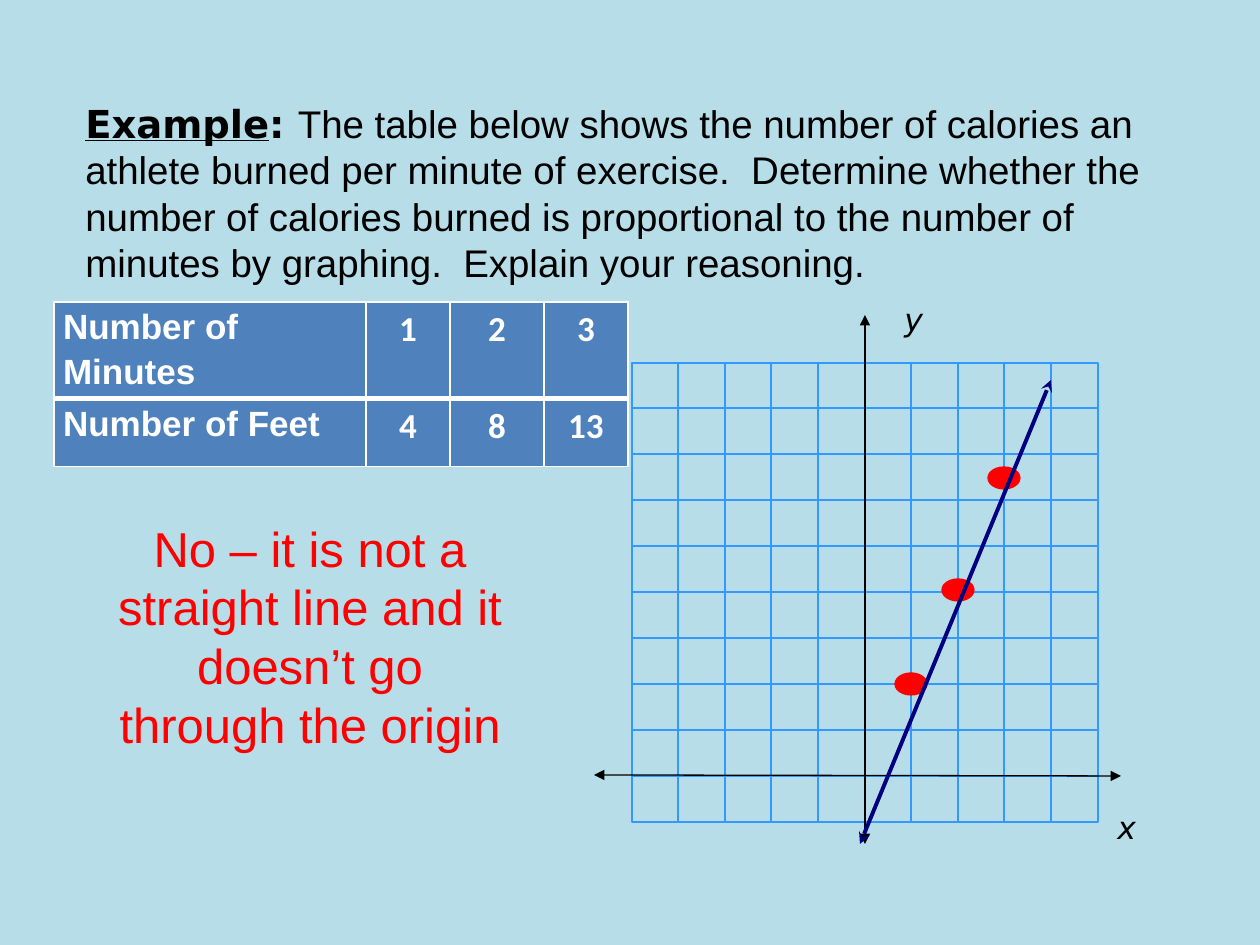
from lxml import etree
from pptx import Presentation
from pptx import util as u
from pptx.dml.color import RGBColor
from pptx.enum import shapes, text
from pptx.oxml.ns import qn

PX = 914400 // 126
HEX = {
    "back": "B7DEE8",
    "grid": "3399FF",
    "cell": "4F81BD",
    "white": "FFFFFF",
    "ink": "000000",
    "red": "FF0000",
    "navy": "000080",
}
ROWS = [
    ["Number of Minutes", "1", "2", "3"],
    ["Number of Feet", "4", "8", "13"],
]
WIDTHS = [312, 84, 94, 84]
ROW_H = 68
GRID = (632, 363, 466, 459)
COUNT = 10
POINTS = [(911, 684), (958, 590), (1004, 478)]


def px(*vals):
    return [u.Emu(v * PX) for v in vals]


def rgb(name):
    return RGBColor.from_string(HEX[name])


def style(run, size, font, color, bold=False, italic=False):
    run.font.size = u.Pt(size)
    run.font.name = font
    run.font.color.rgb = rgb(color)
    run.font.bold = bold
    run.font.italic = italic


def add_text(slide, box, parts, align=text.PP_ALIGN.LEFT):
    """Add a text box; parts pairs each run's wording with its style."""
    frame = slide.shapes.add_textbox(*px(*box)).text_frame
    frame.word_wrap = True
    frame.auto_size = text.MSO_AUTO_SIZE.SHAPE_TO_FIT_TEXT
    para = frame.paragraphs[0]
    para.alignment = align
    for words, look in parts:
        run = para.add_run()
        run.text = words
        style(run, *look)
    return para


def add_shape(parent, kind, box, line, fill=None):
    shape = parent.shapes.add_shape(kind, *px(*box))
    shape.shadow.inherit = False
    if fill:
        shape.fill.solid()
        shape.fill.fore_color.rgb = rgb(fill)
    else:
        shape.fill.background()
    shape.line.color.rgb = rgb(line)
    shape.line.width = u.Pt(0.75)


def add_grid(slide):
    left, top, width, height = GRID
    xs = [left + i * width // COUNT for i in range(COUNT + 1)]
    ys = [top + i * height // COUNT for i in range(COUNT + 1)]
    group = slide.shapes.add_group_shape()
    for y, low in zip(ys, ys[1:]):
        for x, right in zip(xs, xs[1:]):
            box = (x, y, right - x, low - y)
            add_shape(group, shapes.MSO_SHAPE.RECTANGLE, box, "grid")


def add_arrow(slide, ends, color, width, tip):
    """Add a line with the same arrowhead at both ends."""
    line = slide.shapes.add_connector(shapes.MSO_CONNECTOR.STRAIGHT, *px(*ends))
    line.line.color.rgb = rgb(color)
    line.line.width = u.Pt(width)
    props = line.line._get_or_add_ln()
    for tag in ("a:headEnd", "a:tailEnd"):
        etree.SubElement(props, qn(tag), type=tip)
    etree.SubElement(line._element.spPr, qn("a:effectLst"))


def add_border(cell, side, width):
    line = etree.SubElement(
        cell._tc.get_or_add_tcPr(), qn(f"a:ln{side}"), w=str(u.Pt(width))
    )
    fill = etree.SubElement(line, qn("a:solidFill"))
    etree.SubElement(fill, qn("a:srgbClr"), val=HEX["white"])


def fill_cell(cell, words, row, col):
    cell.margin_left = cell.margin_right = px(9)[0]
    cell.margin_top = cell.margin_bottom = 0
    for side in "LRTB":
        inner = side == ("B" if row == 0 else "T")
        add_border(cell, side, 3 if inner else 1)
    cell.fill.solid()
    cell.fill.fore_color.rgb = rgb("cell")
    para = cell.text_frame.paragraphs[0]
    para.text = words
    para.line_spacing = 1.15
    para.space_after = u.Pt(10)
    para.alignment = text.PP_ALIGN.CENTER if col else text.PP_ALIGN.LEFT
    style(para.runs[0], 20, "Calibri" if col else "Arial", "white", bold=True)


def add_table(slide):
    box = px(54, 302, sum(WIDTHS), ROW_H * len(ROWS))
    table = slide.shapes.add_table(len(ROWS), len(WIDTHS), *box).table
    table.first_row = table.horz_banding = False
    for col, width in zip(table.columns, px(*WIDTHS)):
        col.width = width
    for r, row in enumerate(ROWS):
        for c, words in enumerate(row):
            fill_cell(table.cell(r, c), words, r, c)


def main():
    deck = Presentation()
    deck.slide_width, deck.slide_height = u.Inches(10), u.Inches(7.5)
    slide = deck.slides.add_slide(deck.slide_layouts[6])
    slide.background.fill.solid()
    slide.background.fill.fore_color.rgb = rgb("back")

    label = (22, "DejaVu Sans", "ink", True)
    task = add_text(slide, (73, 94, 1109, 204), [
        ("Example", label),
        (": ", label),
        ("The table below shows the number of calories an athlete burned "
         "per minute of exercise.  Determine whether the number of calories "
         "burned is proportional to the number of minutes by graphing.  "
         "Explain your reasoning.", (22, "Arial", "ink")),
    ])
    task.runs[0].font.underline = True

    add_grid(slide)
    add_arrow(slide, (865, 315, 865, 844), "ink", 1.5, "triangle")
    axis = (18, "DejaVu Sans", "ink", False, True)
    add_text(slide, (892, 294, 93, 50), [("y", axis)])
    add_text(slide, (1105, 802, 93, 63), [("x", axis)])
    add_arrow(slide, (594, 775, 1121, 776), "ink", 0.75, "triangle")
    add_table(slide)
    for x, y in POINTS:
        box = (x - 16, y - 11, 32, 22)
        add_shape(slide, shapes.MSO_SHAPE.OVAL, box, "red", "red")
    add_arrow(slide, (860, 844, 1051, 380), "navy", 2.25, "stealth")
    add_text(slide, (96, 512, 428, 251), [
        ("No – it is not a straight line and it doesn’t go through the origin",
         (28, "Arial", "red")),
    ], text.PP_ALIGN.CENTER)
    deck.save("out.pptx")


if __name__ == "__main__":
    main()
